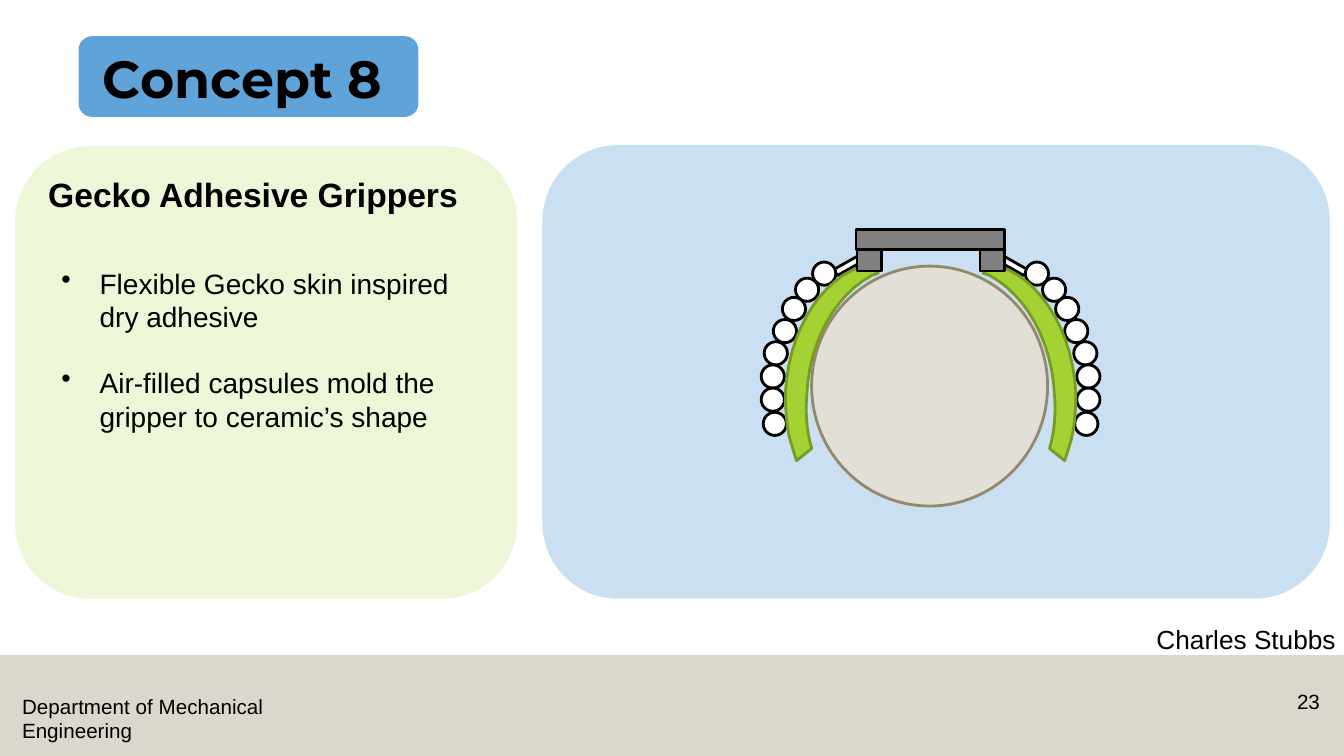
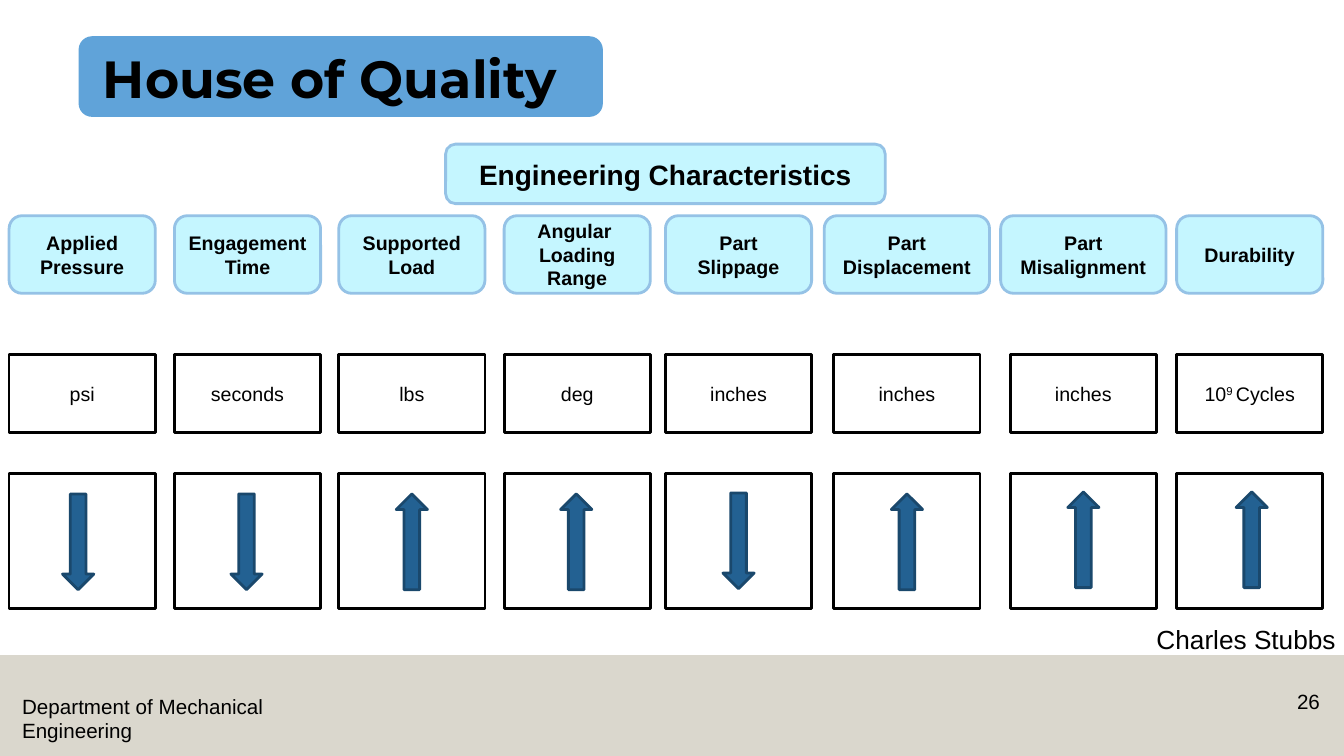
from collections import namedtuple
from dataclasses import dataclass

from lxml import etree
from pptx import Presentation
from pptx.dml.color import RGBColor
from pptx.enum.shapes import MSO_SHAPE as Preset
from pptx.enum.text import MSO_ANCHOR as Anchor, MSO_AUTO_SIZE as AutoSize, PP_ALIGN as Align
from pptx.oxml.ns import qn
from pptx.util import Inches, Pt

Box = namedtuple("Box", "left top width height")
Column = namedtuple("Column", "left header header_width unit arrow arrow_left arrow_top")


@dataclass(frozen=True)
class Theme:
    body_font: str = "Arial"
    title_font: str = "Montserrat"
    black: str = "000000"
    white: str = "FFFFFF"
    band: str = "B7B09C"
    pill: str = "60A3D9"
    blue_panel: str = "CAE0F2"
    green_panel: str = "EDF6D6"
    ceramic: str = "E2DFD7"
    ceramic_line: str = "93896B"
    steel: str = "808080"
    gecko: str = "A4D233"
    gecko_line: str = "799B26"
    header: str = "C5F6FF"
    header_line: str = "95C2E6"
    arrow: str = "236192"
    arrow_line: str = "1A486C"
    line_width: float = 2
    title_size: float = 37.3
    heading_size: float = 24
    text_size: float = 20
    author_size: float = 18.7
    footer_size: float = 14.7
    cell_size: float = 14


THEME = Theme()
PAGE = Box(0, 0, 13.33, 7.5)

CAPSULES = [(1.17, 0.32), (1.34, 0.48), (1.47, 0.67), (1.56, 0.89),
            (1.65, 1.11), (1.68, 1.34), (1.68, 1.57), (1.66, 1.81)]
STRIP = [
    [(0.64, 0.34)], [(0.52, 0.43)], [(0.58, 0.45)],
    [(0.94, 0.64), (1.21, 1.1), (1.23, 1.66)],
    [(1.24, 1.81), (1.23, 1.96), (1.2, 2.09)],
    [(1.18, 2.17)], [(1.33, 2.29)], [(1.39, 2.1)],
    [(1.43, 1.95), (1.44, 1.78), (1.44, 1.61)],
    [(1.41, 1.05), (1.14, 0.58), (0.78, 0.4)],
]
UP, DOWN = Preset.UP_ARROW, Preset.DOWN_ARROW
COLUMNS = [
    Column(0.09, "Applied Pressure", 1.45, ["psi"], DOWN, 0.62, 4.9),
    Column(1.73, "Engagement Time", 1.45, ["seconds"], DOWN, 2.29, 4.9),
    Column(3.36, "Supported Load", 1.45, ["lbs"], UP, 3.93, 4.9),
    Column(5, "Angular \nLoading Range", 1.45, ["deg"], UP, 5.56, 4.9),
    Column(6.6, "Part Slippage", 1.45, ["inches"], DOWN, 7.17, 4.89),
    Column(8.27, "Part Displacement", 1.64, ["inches"], UP, 8.84, 4.9),
    Column(10.02, "Part Misalignment", 1.64, ["inches"], UP, 10.59, 4.88),
    Column(11.67, "Durability", 1.45, ["10", "9 ", "Cycles"], UP, 12.26, 4.88),
]


def inches(box):
    return [Inches(value) for value in box]


def paint(shape, fill, line=None):
    shape.shadow.inherit = False
    shape.fill.solid()
    shape.fill.fore_color.rgb = RGBColor.from_string(fill)
    if line:
        shape.line.color.rgb = RGBColor.from_string(line)
        shape.line.width = Pt(THEME.line_width)
    else:
        shape.line.fill.background()
    return shape


def add_preset(shapes, preset, box, fill, line=None):
    return paint(shapes.add_shape(preset, *inches(box)), fill, line)


def add_span(para, text, size, bold=False, font=THEME.body_font):
    span = para.add_run()
    span.text = text
    span.font.name = font
    span.font.size = Pt(size)
    span.font.bold = bold
    span.font.color.rgb = RGBColor.from_string(THEME.black)
    return span


def write(shape, text, size, bold=False, align=Align.LEFT):
    frame = shape.text_frame
    frame.word_wrap = True
    para = frame.paragraphs[0]
    para.alignment = align
    for index, part in enumerate(text.split("\n")):
        if index:
            para.add_line_break()
        add_span(para, part, size, bold)
    return frame


def add_text(shapes, box, text, size, bold=False, align=Align.LEFT):
    return write(shapes.add_textbox(*inches(box)), text, size, bold, align)


def add_footer(deck, page):
    layout = page.slide_layout
    band = add_preset(page.shapes, Preset.RECTANGLE, Box(0, 6.5, PAGE.width, 1), THEME.band)
    color = band.fill.fore_color
    color_node = next(band.element.spPr.iter(qn("a:srgbClr")))
    etree.SubElement(color_node, qn("a:alpha")).set("val", "50000")
    department = page.shapes.add_textbox(*inches(Box(0.12, 6.83, 3.59, 0.59)))
    write(department, "Department of Mechanical Engineering", THEME.footer_size)
    for shape in (band, department):
        layout.shapes.element.append(shape.element)


def add_page(deck, title_text, pill_width, number):
    page = deck.slides.add_slide(deck.slide_layouts[5])
    add_preset(page.shapes, Preset.ROUNDED_RECTANGLE, Box(0.78, 0.36, pill_width, 0.8), THEME.pill)
    title = page.shapes.title
    title.left, title.top, title.width, title.height = inches(Box(0.92, 0.05, 11.5, 1.09))
    page.shapes.element.append(title.element)
    frame = title.text_frame
    frame.auto_size = AutoSize.NONE
    frame.vertical_anchor = Anchor.BOTTOM
    para = frame.paragraphs[0]
    para.alignment = Align.LEFT
    para.line_spacing = 0.9
    add_span(para, title_text, THEME.title_size, True, THEME.title_font)
    add_text(page.shapes, Box(12.42, 6.79, 0.77, 0.4), number, THEME.footer_size, align=Align.RIGHT)
    author = add_text(page.shapes, Box(11.34, 6.05, 2.16, 0.58), "Charles Stubbs", THEME.author_size)
    author.margin_left = author.margin_right = Inches(0.13)
    author.margin_top = author.margin_bottom = Inches(0.13)
    return page


def add_bullet(para, text, space=0):
    properties = para._p.get_or_add_pPr()
    properties.set("marL", str(Inches(0.38)))
    properties.set("indent", str(-Inches(0.38)))
    etree.SubElement(properties, qn("a:buChar")).set("char", "•")
    para.space_before = Pt(space)
    add_span(para, text, THEME.text_size)


def add_summary(page, box):
    add_preset(page.shapes, Preset.ROUNDED_RECTANGLE, box, THEME.green_panel)
    add_text(page.shapes, Box(box.left + 0.23, box.top + 0.23, 4.59, 0.5),
             "Gecko Adhesive Grippers", THEME.heading_size, True)
    listing = page.shapes.add_textbox(*inches(Box(box.left + 0.36, box.top + 1.14, 4.13, 1.78)))
    frame = listing.text_frame
    frame.word_wrap = True
    add_bullet(frame.paragraphs[0], "Flexible Gecko skin inspired dry adhesive")
    add_bullet(frame.add_paragraph(), "Air-filled capsules mold the gripper to ceramic’s shape", 23)


def trace(segments, steps=12):
    points = []
    for segment in segments:
        if len(segment) == 1:
            points.append(segment[0])
            continue
        controls = [points[-1], *segment]
        for step in range(1, steps + 1):
            t = step / steps
            weights = ((1 - t) ** 3, 3 * t * (1 - t) ** 2, 3 * t * t * (1 - t), t ** 3)
            points.append(tuple(sum(w * c[axis] for w, c in zip(weights, controls)) for axis in (0, 1)))
    return points


def add_arm(shapes, axis, top, side):
    def mirrored(out, down, width, height):
        left = axis - out if side < 0 else axis + out - width
        return Box(left, top + down, width, height)

    rod = add_preset(shapes, Preset.RECTANGLE, mirrored(0.96, 0.32, 0.28, 0.07), THEME.white, THEME.black)
    rod.rotation = side * 29.4
    for out, down in CAPSULES:
        add_preset(shapes, Preset.OVAL, mirrored(out, down, 0.23, 0.23), THEME.white, THEME.black)
    outline = [(Inches(axis + side * out), Inches(top + down)) for out, down in trace(STRIP)]
    builder = shapes.build_freeform(*outline[0])
    builder.add_line_segments(outline[1:], close=True)
    paint(builder.convert_to_shape(), THEME.gecko, THEME.gecko_line)
    add_preset(shapes, Preset.RECTANGLE, mirrored(0.73, 0.2, 0.24, 0.21), THEME.steel, THEME.black)


def add_gripper(page, box):
    add_preset(page.shapes, Preset.ROUNDED_RECTANGLE, box, THEME.blue_panel)
    shapes = page.shapes.add_group_shape().shapes
    axis, top = box.left + 3.85, box.top + 0.84
    add_preset(shapes, Preset.OVAL, Box(axis - 1.18, top + 0.36, 2.34, 2.38), THEME.ceramic, THEME.ceramic_line)
    add_preset(shapes, Preset.RECTANGLE, Box(axis - 0.74, top, 1.47, 0.2), THEME.steel, THEME.black)
    for side in (-1, 1):
        add_arm(shapes, axis, top, side)


def add_label(shapes, box, text, size):
    label = add_preset(shapes, Preset.ROUNDED_RECTANGLE, box, THEME.header, THEME.header_line)
    frame = write(label, text, size, True, Align.CENTER)
    frame.vertical_anchor = Anchor.MIDDLE


def add_column(page, column, top):
    shapes, width = page.shapes, 1.45
    header_left = column.left - (column.header_width - width) / 2
    add_label(shapes, Box(header_left, top, column.header_width, 0.77), column.header, THEME.cell_size)
    unit = add_preset(shapes, Preset.RECTANGLE, Box(column.left, top + 1.38, width, 0.77),
                      THEME.white, THEME.black)
    frame = write(unit, column.unit[0], THEME.cell_size, align=Align.CENTER)
    frame.vertical_anchor = Anchor.MIDDLE
    for index, text in enumerate(column.unit[1:]):
        span = add_span(frame.paragraphs[0], text, THEME.cell_size)
        if index == 0:
            span._r.get_or_add_rPr().set("baseline", "30000")
    add_preset(shapes, Preset.RECTANGLE, Box(column.left, top + 2.56, width, 1.34), THEME.white, THEME.black)
    add_preset(shapes, column.arrow, Box(column.arrow_left, column.arrow_top, 0.31, 0.95),
               THEME.arrow, THEME.arrow_line)


def build_concept(deck):
    page = add_page(deck, "Concept 8", 3.37, "23")
    add_footer(deck, page)
    add_gripper(page, Box(5.38, 1.44, 7.81, 4.5))
    add_summary(page, Box(0.15, 1.45, 4.98, 4.49))


def build_quality(deck):
    page = add_page(deck, "House of Quality", 5.2, "26")
    add_label(page.shapes, Box(4.42, 1.43, 4.36, 0.59), "Engineering Characteristics", THEME.text_size)
    for column in COLUMNS:
        add_column(page, column, 2.14)


def main():
    deck = Presentation()
    deck.slide_width, deck.slide_height = Inches(PAGE.width), Inches(PAGE.height)
    build_concept(deck)
    build_quality(deck)
    deck.save("out.pptx")


if __name__ == "__main__":
    main()
